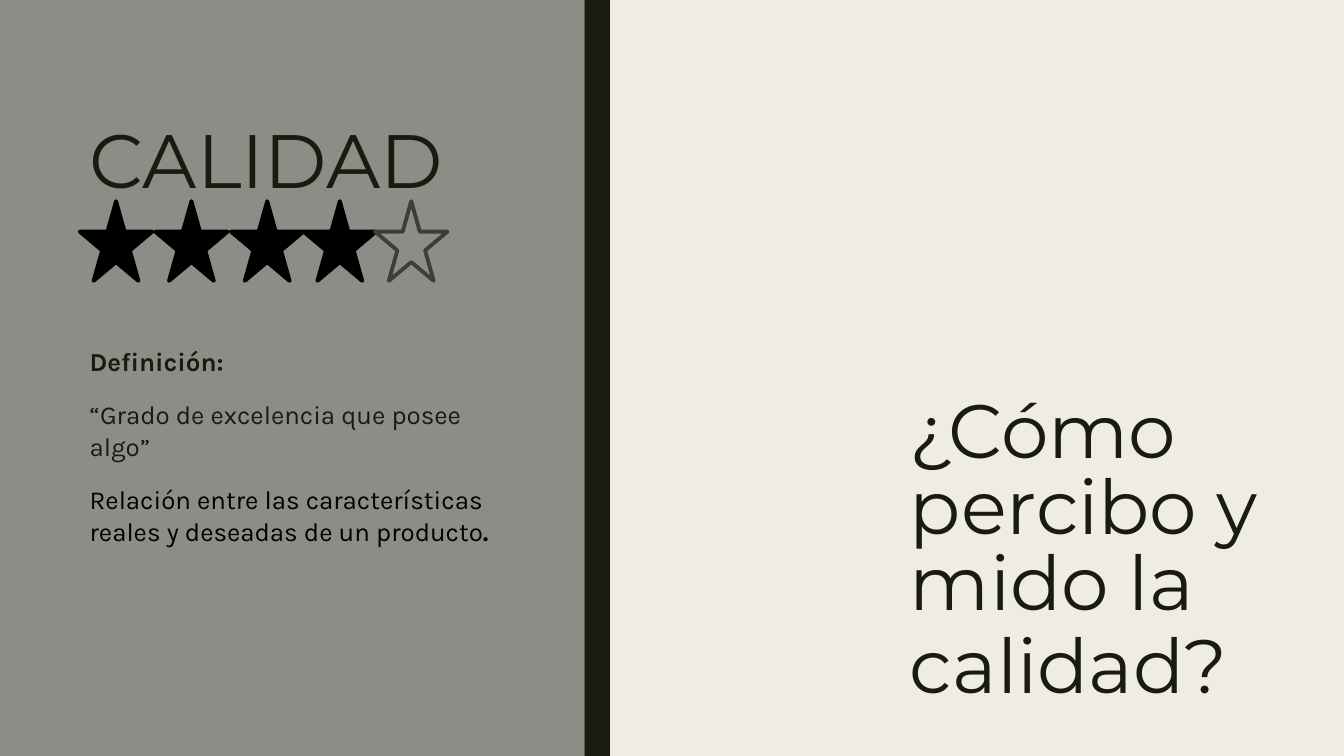
from dataclasses import dataclass

from pptx import Presentation
from pptx.dml.color import RGBColor
from pptx.enum.shapes import MSO_SHAPE
from pptx.enum.text import MSO_ANCHOR, MSO_AUTO_SIZE, PP_ALIGN
from pptx.shapes.autoshape import Shape
from pptx.slide import Slide
from pptx.text.text import TextFrame
from pptx.util import Cm, Pt

COLORS = {
    "paper": "EFEDE3",
    "panel": "8C8D86",
    "ink": "191B0E",
    "black": "000000",
    "outline": "3D3E3B",
}
SLIDE_WIDTH, SLIDE_HEIGHT = 33.87, 19.05
PANEL_WIDTH, STRIPE_WIDTH = 14.73, 0.64
TEXT_LEFT, TEXT_WIDTH = 2.01, 10.72
STAR_WIDTH, STAR_HEIGHT, STAR_TOP = 1.83, 2.01, 5.07


@dataclass
class Star:
    left: float
    fill: str = "black"
    line: str = "black"


@dataclass
class Statement:
    text: str
    color: str = "ink"
    bold: bool = False
    ending: str = ""


STARS = [Star(2.01), Star(3.91), Star(5.82), Star(7.65), Star(9.45, "panel", "outline")]
STATEMENTS = [
    Statement("Definición:", bold=True),
    Statement("“Grado de excelencia que posee algo”"),
    Statement(
        "Relación entre las características reales y deseadas de un producto",
        "black",
        ending=".",
    ),
]


def color(name: str) -> RGBColor:
    """Return the named colour."""
    return RGBColor.from_string(COLORS[name])


def add_filled(slide: Slide, kind: MSO_SHAPE, left: float, top: float,
               width: float, height: float, fill: str) -> Shape:
    """Add a flat preset shape without an outline."""
    shape = slide.shapes.add_shape(kind, Cm(left), Cm(top), Cm(width), Cm(height))
    shape.shadow.inherit = False
    shape.fill.solid()
    shape.fill.fore_color.rgb = color(fill)
    shape.line.fill.background()
    return shape


def add_star(slide: Slide, star: Star) -> None:
    """Add one star of the rating."""
    shape = add_filled(slide, MSO_SHAPE.STAR_5_POINT, star.left, STAR_TOP,
                       STAR_WIDTH, STAR_HEIGHT, star.fill)
    shape.line.color.rgb = color(star.line)
    shape.line.width = Pt(2.75)


def prepare_frame(frame: TextFrame) -> None:
    """Make a text frame wrap, start at the top and keep its size."""
    frame.word_wrap = True
    frame.auto_size = MSO_AUTO_SIZE.NONE
    frame.vertical_anchor = MSO_ANCHOR.TOP


def write_heading(frame: TextFrame, text: str, margin_top: float) -> None:
    """Write a large heading below a top margin."""
    prepare_frame(frame)
    frame.margin_top = Cm(margin_top)
    paragraph = frame.paragraphs[0]
    paragraph.alignment = PP_ALIGN.LEFT
    paragraph.line_spacing = 0.84
    paragraph.font.name = "Montserrat"
    paragraph.font.size = Pt(54)
    paragraph.font.color.rgb = color("ink")
    paragraph.add_run().text = text


def write_statements(frame: TextFrame, statements: list[Statement]) -> None:
    """Write the definition, one paragraph for each statement."""
    prepare_frame(frame)
    for index, statement in enumerate(statements):
        paragraph = frame.add_paragraph() if index else frame.paragraphs[0]
        paragraph.line_spacing = 1.03
        paragraph.space_after = Pt(15)
        paragraph.font.name = "Karla"
        paragraph.font.size = Pt(18.5)
        paragraph.font.bold = statement.bold
        paragraph.font.color.rgb = color(statement.color)
        paragraph.add_run().text = statement.text
        if statement.ending:
            ending = paragraph.add_run()
            ending.text = statement.ending
            ending.font.bold = True


def main() -> None:
    """Build the slide about quality."""
    presentation = Presentation()
    presentation.slide_width = Cm(SLIDE_WIDTH)
    presentation.slide_height = Cm(SLIDE_HEIGHT)
    slide = presentation.slides.add_slide(presentation.slide_layouts[5])
    slide.background.fill.solid()
    slide.background.fill.fore_color.rgb = color("paper")

    title = slide.shapes.title
    for left, width, fill in ((0, PANEL_WIDTH, "panel"), (PANEL_WIDTH, STRIPE_WIDTH, "ink")):
        band = add_filled(slide, MSO_SHAPE.RECTANGLE, left, 0, width, SLIDE_HEIGHT, fill)
        title.element.addprevious(band.element)

    title.left, title.top = Cm(TEXT_LEFT), Cm(1.17)
    title.width, title.height = Cm(TEXT_WIDTH), Cm(6.25)
    write_heading(title.text_frame, "CALIDAD", 2.04)

    for star in STARS:
        add_star(slide, star)

    definition = slide.shapes.add_textbox(Cm(TEXT_LEFT), Cm(8.56), Cm(TEXT_WIDTH), Cm(5.51))
    write_statements(definition.text_frame, STATEMENTS)

    question = slide.shapes.add_textbox(Cm(22.68), Cm(8.15), Cm(12.45), Cm(13.67))
    write_heading(question.text_frame, "¿Cómo percibo y mido la calidad?", 1.86)
    spacer = question.text_frame.paragraphs[0].add_run()
    spacer.text = " "
    spacer.font.size = Pt(60)

    presentation.save("out.pptx")


if __name__ == "__main__":
    main()
